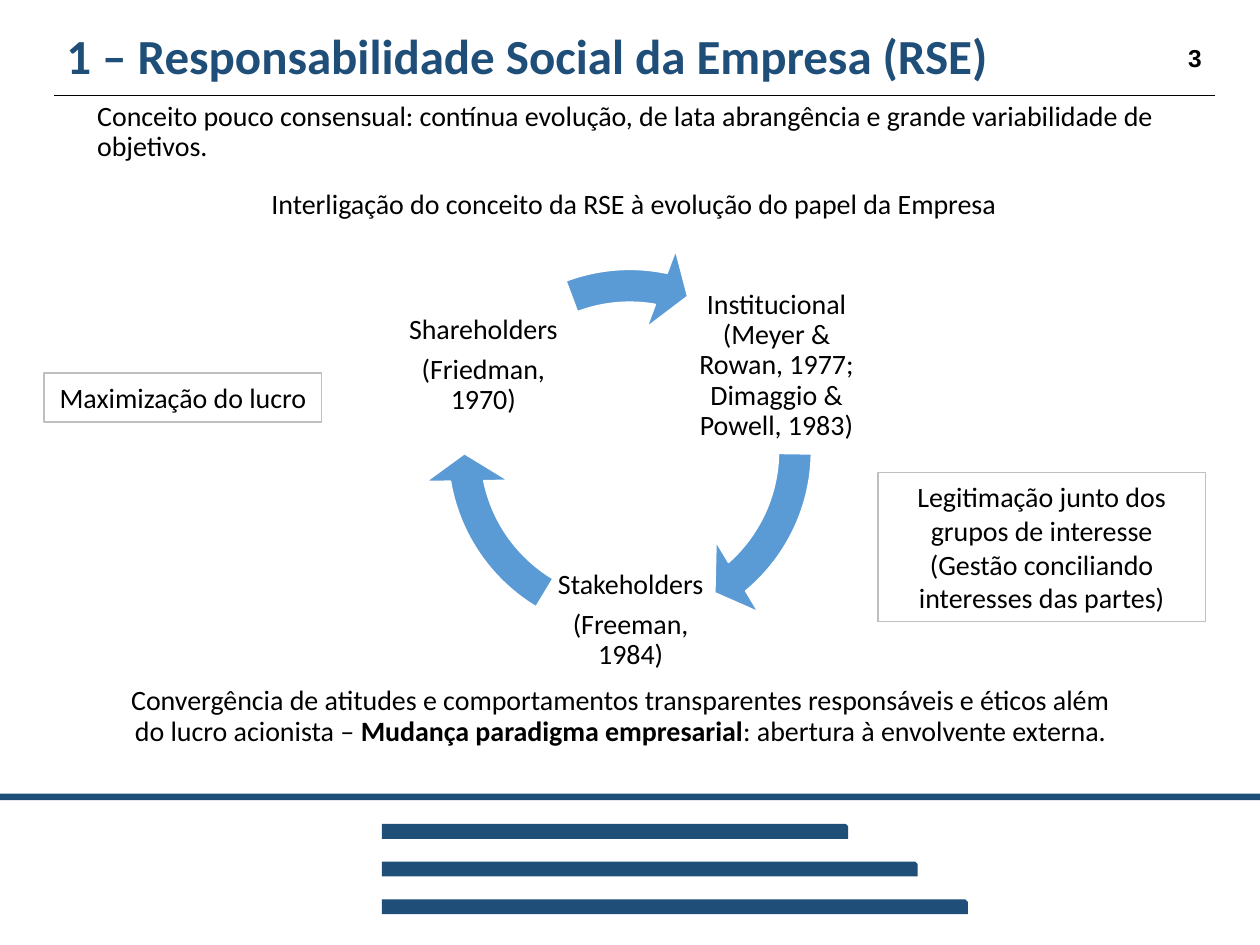
from lxml.etree import SubElement
from pptx import Presentation
from pptx.dml.color import RGBColor
from pptx.enum.shapes import MSO_CONNECTOR as Link, MSO_SHAPE as Form
from pptx.enum.text import MSO_ANCHOR as Anchor, PP_ALIGN as Align
from pptx.oxml.ns import qn
from pptx.util import Cm, Pt

NAVY = RGBColor(0x1F, 0x4E, 0x79)
BLUE = RGBColor(0x5B, 0x9B, 0xD5)
GREY = RGBColor(0xBF, 0xBF, 0xBF)
BLACK = RGBColor(0, 0, 0)
WHITE = RGBColor(255, 255, 255)

NODES = [
    (13.89, 5.61, ["Institucional\n(Meyer & Rowan, 1977; Dimaggio & Powell, 1983)"]),
    (10.95, 10.74, ["Stakeholders", "(Freeman, 1984)"]),
    (7.98, 5.61, ["Shareholders", "(Friedman, 1970)"]),
]
ARCS = [(29.66, 0.51), (101.74, 72.59), (168.58, 149.66)]
BARS = [9.4, 10.8, 11.81]


def add_shape(slide, form, x, y, w, h, fill=None, edge=None, width=0.75):
    shape = slide.shapes.add_shape(form, Cm(x), Cm(y), Cm(w), Cm(h))
    shape.shadow.inherit = False
    if fill is None:
        shape.fill.background()
    else:
        shape.fill.solid()
        shape.fill.fore_color.rgb = fill
    if edge is None:
        shape.line.fill.background()
    else:
        shape.line.color.rgb = edge
        shape.line.width = Pt(width)
    return shape


def add_box(slide, x, y, w, h, anchor=Anchor.TOP, inset=None):
    box = slide.shapes.add_textbox(Cm(x), Cm(y), Cm(w), Cm(h))
    frame = box.text_frame
    frame.word_wrap = True
    frame.vertical_anchor = anchor
    if inset is not None:
        frame.margin_left = frame.margin_right = Cm(inset)
        frame.margin_top = frame.margin_bottom = Cm(inset)
    return frame


def add_run(para, text, size=16, color=BLACK, bold=False, face="Calibri"):
    for i, part in enumerate(text.split("\n")):
        if i:
            para.add_line_break()
        run = para.add_run()
        run.text = part
        font = run.font
        font.name, font.size, font.bold = face, Pt(size), bold
        font.color.rgb = color


def style(para, align=Align.LEFT, space=0.9, before=0, after=0):
    para.alignment = align
    para.line_spacing = space
    para.space_before = Pt(before)
    para.space_after = Pt(after)
    return para


def add_head(slide):
    line = slide.shapes.add_connector(
        Link.STRAIGHT, Cm(1.09), Cm(1.93), Cm(24.49), Cm(1.93))
    line.line.color.rgb = BLACK
    line.line.width = Pt(0.5)
    SubElement(line._element.spPr, qn("a:effectLst"))
    title = add_box(slide, 1.09, 0.53, 23.39, 1.32, Anchor.MIDDLE)
    add_run(style(title.paragraphs[0]),
            "1 – Responsabilidade Social da Empresa (RSE)", 28, NAVY, True)
    page = add_box(slide, 23.7, 0.74, 0.99, 0.86)
    add_run(page.paragraphs[0], "3", 14, bold=True, face="Arial")


def add_body(slide):
    frame = add_box(slide, 1.07, 1.93, 23.42, 3.2)
    first = style(frame.paragraphs[0], after=6)
    first._p.get_or_add_pPr().set("marL", str(Cm(0.64)))
    add_run(first, "Conceito pouco consensual: contínua evolução, de lata "
            "abrangência e grande variabilidade de objetivos.")
    second = style(frame.add_paragraph(), Align.CENTER, before=10, after=6)
    add_run(second,
            "Interligação do conceito da RSE à evolução do papel da Empresa")


def add_cycle(slide):
    for (x, y, texts), (end, start) in zip(NODES, ARCS):
        frame = add_box(slide, x, y, 3.53, 3.53, Anchor.MIDDLE, 0.05)
        for i, text in enumerate(texts):
            para = frame.add_paragraph() if i else frame.paragraphs[0]
            add_run(style(para, Align.CENTER, after=5.6), text)
        arc = add_shape(slide, Form.CIRCULAR_ARROW, 8.53, 4.93, 8.33, 8.33,
                        BLUE, WHITE, 1)
        for i, value in enumerate((0.08, 5.76, end, start, 0.1)):
            arc.adjustments[i] = value


def add_note(slide, x, y, w, h, text):
    frame = add_shape(slide, Form.RECTANGLE, x, y, w, h, edge=GREY).text_frame
    frame.word_wrap = True
    frame.vertical_anchor = Anchor.MIDDLE
    add_run(style(frame.paragraphs[0], Align.CENTER, 1), text)


def add_close(slide):
    frame = add_box(slide, 2.11, 13.72, 20.8, 1.4)
    para = style(frame.paragraphs[0], Align.CENTER)
    add_run(para, "Convergência de atitudes e comportamentos transparentes "
            "responsáveis e éticos além do lucro acionista – ")
    add_run(para, "Mudança paradigma empresarial", bold=True)
    add_run(para, ": abertura à envolvente externa.")


def add_foot(slide):
    add_shape(slide, Form.RECTANGLE, 0, 16, 25.4, 0.13, NAVY)
    for i, w in enumerate(BARS):
        add_shape(slide, Form.SNIP_1_RECTANGLE, 7.7, 16.61 + 0.76 * i,
                  w, 0.3, NAVY)


def main():
    deck = Presentation()
    deck.slide_width, deck.slide_height = Cm(25.4), Cm(19.05)
    slide = deck.slides.add_slide(deck.slide_layouts[6])
    add_foot(slide)
    add_head(slide)
    add_body(slide)
    add_cycle(slide)
    add_close(slide)
    add_note(slide, 17.7, 9.53, 6.6, 3,
             "Legitimação junto dos grupos de interesse "
             "(Gestão conciliando interesses das partes)")
    add_note(slide, 0.89, 7.52, 5.6, 0.99, "Maximização do lucro")
    deck.save("out.pptx")


if __name__ == "__main__":
    main()
